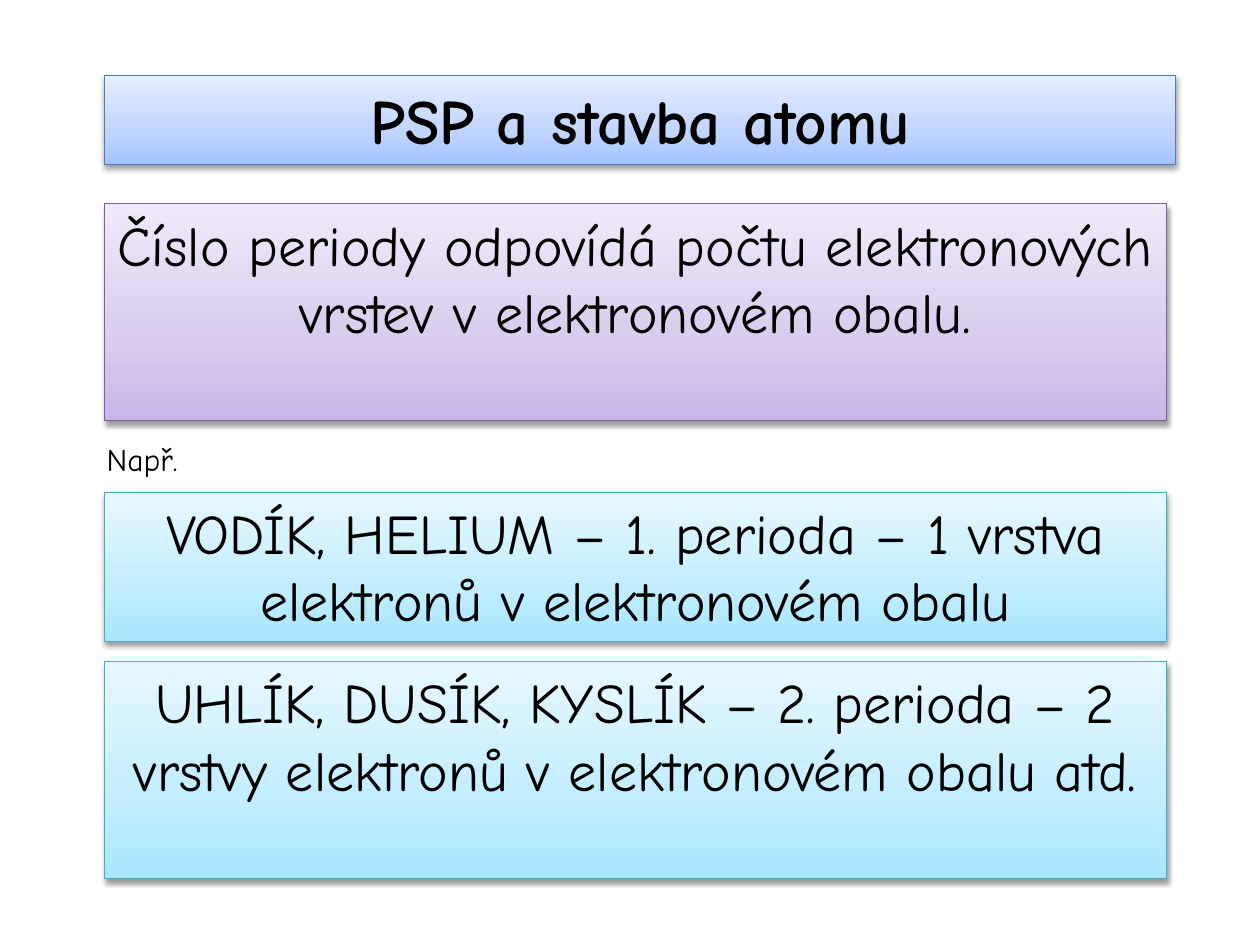
from lxml.etree import SubElement
from pptx import Presentation
from pptx.dml.color import RGBColor
from pptx.enum.shapes import MSO_SHAPE
from pptx.enum.text import MSO_ANCHOR, PP_ALIGN
from pptx.oxml.ns import qn
from pptx.util import Cm, Pt

LEFT = 2.11
WIDTH = 21.41
PURPLE = {"line": "7D60A0", "stops": ((0, "C9B5E8"), (35, "D8CBEE"), (100, "F0EAF9"))}
BLUE = {"line": "4B7EBC", "stops": ((0, "A4C4FF"), (35, "BFD4FF"), (100, "E6EEFF"))}
AQUA = {"line": "46AAC5", "stops": ((0, "A7E6FF"), (35, "C1EDFF"), (100, "E7F8FF"))}


def colour(value):
    return RGBColor.from_string(value)


def add_colour(parent, value):
    return SubElement(parent, qn("a:srgbClr"), val=value)


class SlideBuilder:
    """Holds the slide and the text style shared by its elements."""

    font = {"name": "Comic Neue", "size": Pt(32), "bold": False}
    text_colour = "000000"

    def __init__(self, page):
        self.page = page

    def set_text(self, shape, text, align, wrap, **changes):
        frame = shape.text_frame
        settings = {"word_wrap": wrap, "vertical_anchor": MSO_ANCHOR.TOP}
        for name, value in settings.items():
            setattr(frame, name, value)
        para = frame.paragraphs[0]
        para.alignment = align
        span = para.add_run()
        span.text = text
        for name, value in {**self.font, **changes}.items():
            setattr(span.font, name, value)
        span.font.color.rgb = colour(self.text_colour)

    def panel(self, text, top, height, theme, width=WIDTH, **changes):
        box = self.page.shapes.add_shape(
            MSO_SHAPE.RECTANGLE, Cm(LEFT), Cm(top), Cm(width), Cm(height))
        self.shade(box, theme["stops"])
        box.line.color.rgb = colour(theme["line"])
        box.line.width = Pt(0.75)
        self.drop_shadow(box)
        self.set_text(box, text, PP_ALIGN.CENTER, True, **changes)

    def shade(self, box, stops):
        """Fill the box with a gradient that runs from bottom to top."""
        box.fill.gradient()
        box.fill.gradient_angle = 90
        stop_list = box.element.spPr.find(".//" + qn("a:gsLst"))
        for stop in list(stop_list):
            stop_list.remove(stop)
        for position, value in stops:
            stop = SubElement(stop_list, qn("a:gs"), pos=str(position * 1000))
            add_colour(stop, value)

    def drop_shadow(self, box):
        box.shadow.inherit = False
        effects = box.element.spPr.find(qn("a:effectLst"))
        shadow = SubElement(effects, qn("a:outerShdw"), blurRad="40000",
                            dist="20000", dir="5400000", rotWithShape="0")
        SubElement(add_colour(shadow, "000000"), qn("a:alpha"), val="38000")

    def label(self, text, left, top, width, height, **changes):
        box = self.page.shapes.add_textbox(Cm(left), Cm(top), Cm(width), Cm(height))
        self.set_text(box, text, PP_ALIGN.LEFT, False, **changes)


def main():
    deck = Presentation()
    deck.slide_width, deck.slide_height = Cm(25.4), Cm(19.05)
    builder = SlideBuilder(deck.slides.add_slide(deck.slide_layouts[6]))

    builder.panel("Číslo periody odpovídá počtu elektronových vrstev v elektronovém obalu.",
                  4.11, 4.37, PURPLE)
    builder.panel("PSP a stavba atomu", 1.52, 1.8, BLUE, width=21.59,
                  size=Pt(36), bold=True)
    builder.panel("VODÍK, HELIUM – 1. perioda – 1 vrstva elektronů v elektronovém obalu",
                  9.93, 3, AQUA)
    builder.panel("UHLÍK, DUSÍK, KYSLÍK – 2. perioda – 2 vrstvy elektronů "
                  "v elektronovém obalu atd.", 13.34, 4.37, AQUA)
    builder.label("Např.", 1.9, 8.74, 2.36, 1.02, size=Pt(18))

    deck.save("out.pptx")


if __name__ == "__main__":
    main()
